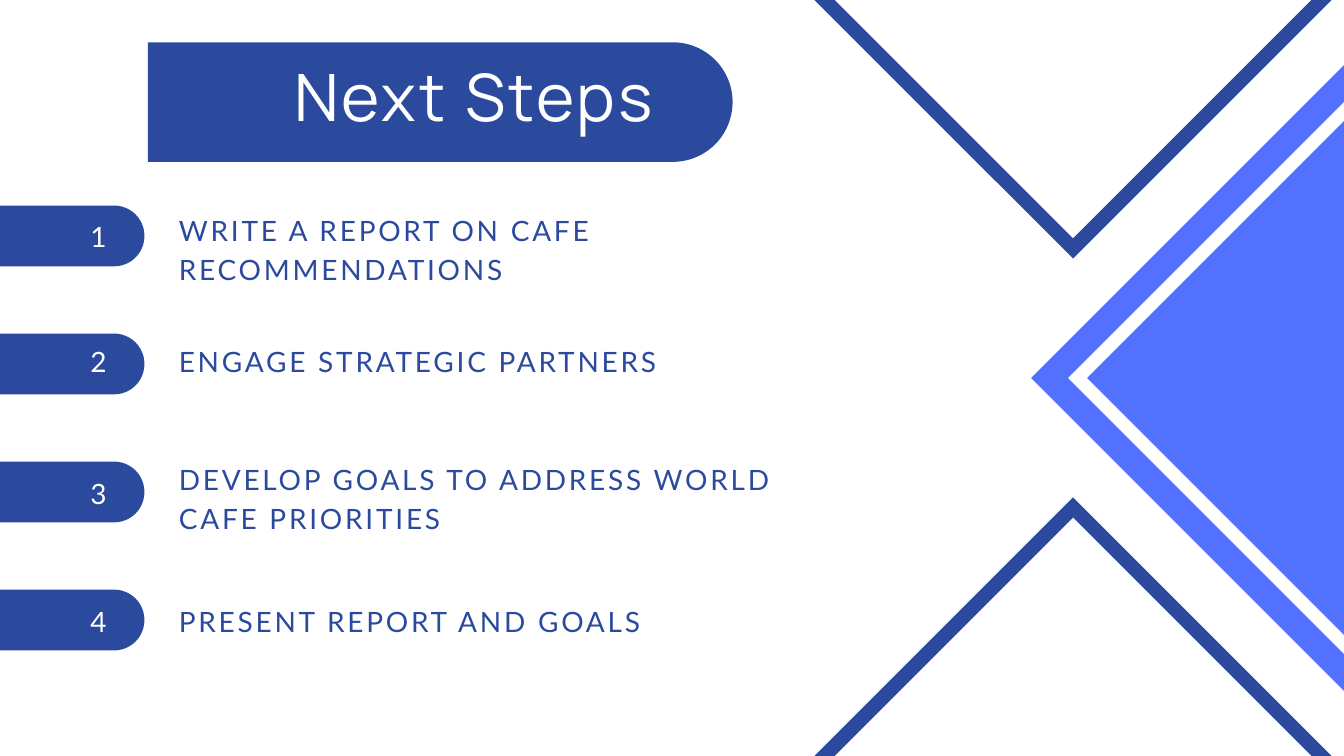
import dataclasses

import pptx
import pptx.dml.color
import pptx.enum.shapes
import pptx.enum.text
import pptx.util

Cm = pptx.util.Cm
Pt = pptx.util.Pt
SHAPE = pptx.enum.shapes.MSO_SHAPE
ALIGN = pptx.enum.text.PP_ALIGN


@dataclasses.dataclass(frozen=True)
class Theme:
    navy: str = "2B4A9D"
    bright: str = "5271FF"
    white: str = "FFFFFF"
    title: tuple = ("Manrope", 70, 73.5, 3.5)  # font, size, line spacing, tracking
    body: tuple = ("Lato", 30, 42, 3)


THEME = Theme()

# Label, its number of lines, and the drop of number and label below the bar's top
STEPS = [
    ("WRITE A REPORT ON CAFE RECOMMENDATIONS", 2, 0.33, 0.08),
    ("ENGAGE STRATEGIC PARTNERS", 1, 0.22, 0.22),
    ("DEVELOP GOALS TO ADDRESS WORLD CAFE PRIORITIES", 2, 0.36, -0.18),
    ("PRESENT REPORT AND GOALS", 1, 0.37, 0.34),
]


def apply_format(target, values):
    for name, value in values.items():
        setattr(target, name, value)


def add_filled_shape(slide, kind, center, size, rotation, color, adjustments=()):
    """Add a borderless shape, placed by its centre so that it can be rotated."""
    (x, y), (width, height) = center, size
    shape = slide.shapes.add_shape(
        kind, Cm(x - width / 2), Cm(y - height / 2), Cm(width), Cm(height))
    for index, value in enumerate(adjustments):
        shape.adjustments[index] = value
    shape.rotation = rotation
    shape.shadow.inherit = False
    shape.fill.solid()
    shape.fill.fore_color.rgb = pptx.dml.color.RGBColor.from_string(color)
    shape.line.fill.background()


def add_text(slide, box, text, style, color, alignment=ALIGN.LEFT):
    font_name, size, line_spacing, tracking = style
    frame = slide.shapes.add_textbox(*map(Cm, box)).text_frame
    apply_format(frame, {
        "margin_left": 0, "margin_top": 0, "margin_right": 0, "margin_bottom": 0,
        "word_wrap": True,
        "auto_size": pptx.enum.text.MSO_AUTO_SIZE.SHAPE_TO_FIT_TEXT,
    })
    paragraph = frame.paragraphs[0]
    apply_format(paragraph, {"alignment": alignment, "line_spacing": Pt(line_spacing)})
    run = paragraph.add_run()
    run.text = text
    apply_format(run.font, {"name": font_name, "size": Pt(size)})
    run.font.color.rgb = pptx.dml.color.RGBColor.from_string(color)
    run._r.get_or_add_rPr().set("spc", str(round(tracking * 100)))


def add_bar(slide, box):
    """Add a navy bar with a round right end."""
    left, top, width, height = box
    add_filled_shape(slide, SHAPE.ROUND_2_SAME_RECTANGLE,
                     (left + width / 2, top + height / 2), (height, width),
                     90, THEME.navy, (0.5, 0))


def add_square_frame(slide, center, side, thickness, color):
    """Add a hollow square standing on its corner."""
    add_filled_shape(slide, SHAPE.FRAME, center, (side, side), 45, color,
                     (thickness / side,))


def add_decoration(slide, box):
    """Add the lozenge at the right edge and the outlines above and below it."""
    left, top, width, height = box
    right, middle = left + width, top + height / 2
    lozenge_center = (right + 1.07, middle)
    add_filled_shape(slide, SHAPE.RECTANGLE, lozenge_center, (18.24, 18.24),
                     45, THEME.bright)
    add_square_frame(slide, lozenge_center, 16.26, 0.5, THEME.white)
    for offset in (16.62, -16.62):
        add_square_frame(slide, (right - 10.24, middle + offset), 17.12, 0.54,
                         THEME.navy)


def add_title(slide, box):
    left, top, _, _ = box
    add_bar(slide, box)
    add_text(slide, (left + 2.56, top + 0.89, 19.51, 2.82), "Next Steps",
             THEME.title, THEME.white, ALIGN.CENTER)


def add_steps(slide, box):
    left, top, width, height = box
    bar_width, bar_height, label_left, line_height = 5.46, 2.3, 6.76, 1.48
    pitch = (height - bar_height) / (len(STEPS) - 1)
    for index, (label, lines, number_drop, label_drop) in enumerate(STEPS):
        bar_top = top + index * pitch
        add_bar(slide, (left, bar_top, bar_width, bar_height))
        add_text(slide, (left + 3.05, bar_top + number_drop, 1.35, line_height),
                 str(index + 1), THEME.body, THEME.white, ALIGN.CENTER)
        add_text(slide, (left + label_left, bar_top + label_drop,
                         width - label_left, lines * line_height),
                 label, THEME.body, THEME.navy)


def main():
    presentation = pptx.Presentation()
    width, height = 50.8, 28.58
    apply_format(presentation, {"slide_width": Cm(width), "slide_height": Cm(height)})
    slide = presentation.slides.add_slide(presentation.slide_layouts[6])
    add_decoration(slide, (0, 0, width, height))
    add_title(slide, (5.59, 1.6, 22.1, 4.52))
    add_steps(slide, (0, 7.77, 31.55, 16.82))
    presentation.save("out.pptx")


if __name__ == "__main__":
    main()
